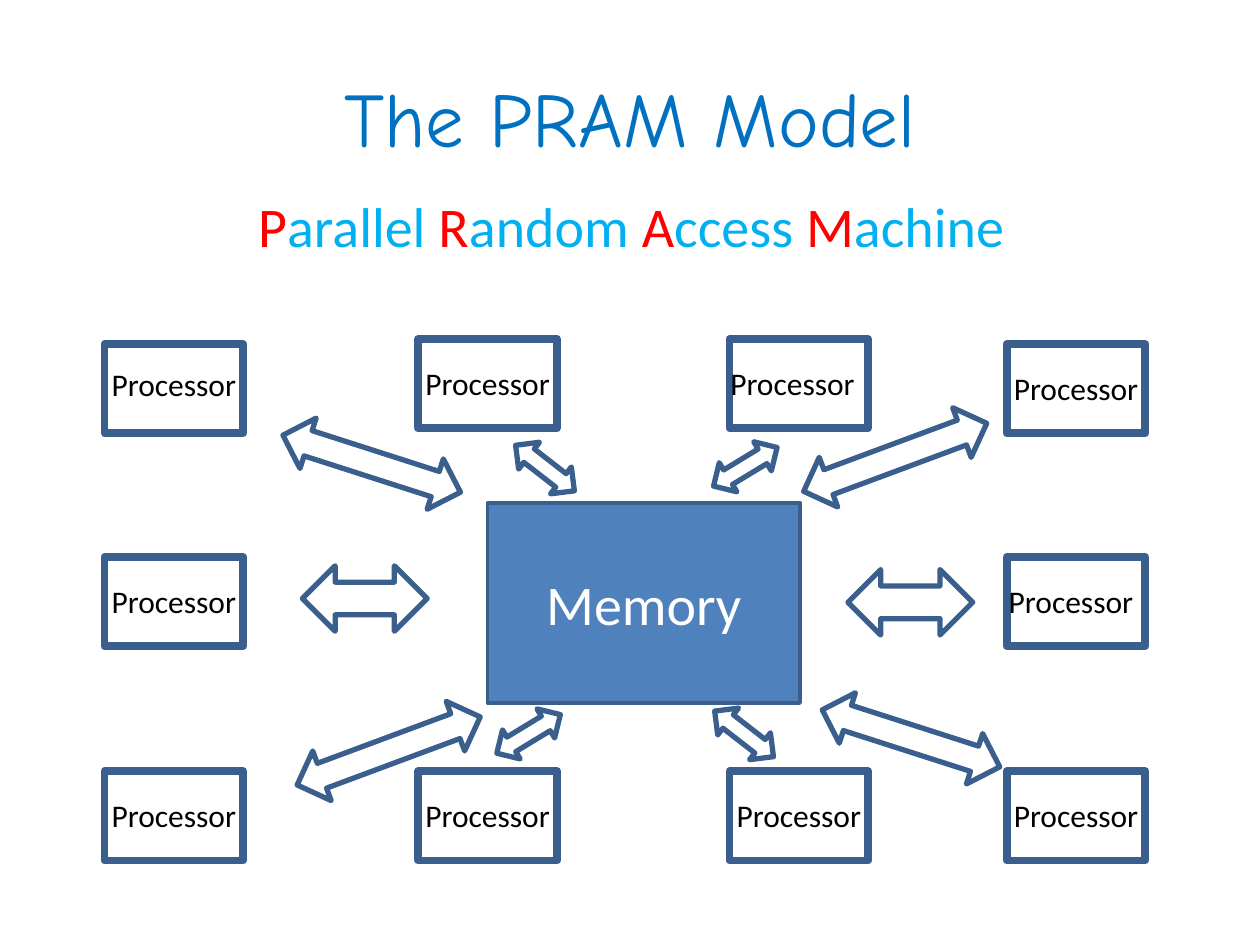
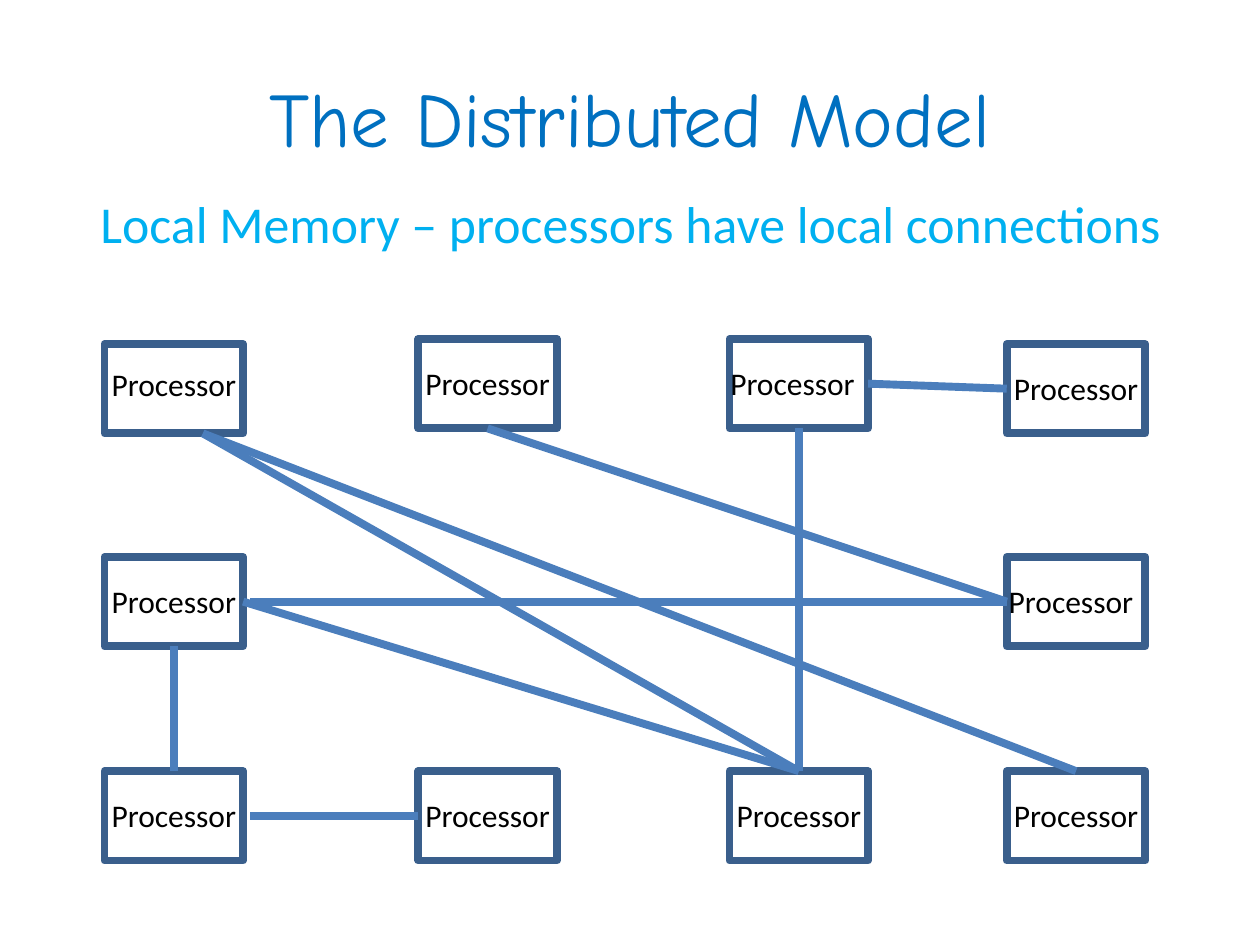
import dataclasses
import pptx
import pptx.dml.color
import pptx.enum.shapes
import pptx.enum.text
import pptx.util
import lxml.etree

Inches = pptx.util.Inches
Shapes = pptx.enum.shapes.MSO_SHAPE
Anchor = pptx.enum.text.MSO_ANCHOR


@dataclasses.dataclass(frozen=True)
class Theme:
    title_font: str = "Comic Neue"
    body_font: str = "Calibri"
    title_color: str = "0070C0"
    subtitle_color: str = "00B0F0"
    initial_color: str = "FF0000"
    label_color: str = "000000"
    memory_fill: str = "4F81BD"
    memory_text: str = "FFFFFF"
    outline: str = "3A5F8C"
    link: str = "4B7EBC"
    title_size: float = 44
    large_size: float = 32
    fitted_size: float = 29.6
    label_size: float = 18
    heavy_line: float = 4.5
    arrow_line: float = 3
    memory_line: float = 2


@dataclasses.dataclass(frozen=True)
class Box:
    left: float
    top: float
    width: float
    height: float

    def inner(self, left, top, width, height):
        return Box(self.left + left, self.top + top, width, height)

    def point(self, across, down):
        return (Inches(self.left + across * self.width),
                Inches(self.top + down * self.height))

    def lengths(self):
        return [Inches(value) for value in (self.left, self.top, self.width, self.height)]


THEME = Theme()
TITLE = Box(0.5, 0.3, 9, 1.25)
SUBTITLE = Box(0.51, 1.47, 9, 0.74)
DIAGRAM = Box(0.83, 2.69, 8.26, 4.14)
COLUMNS = (0, 2.49, 4.96, 7.16)
ROWS = (0.04, 1.73, 3.43)
PROCESSOR_SIZE = (1.1, 0.71)
LABEL_SIZE = (1.2, 0.4)

PROCESSORS = {
    "top left": (COLUMNS[0], ROWS[0]),
    "top inner left": (COLUMNS[1], 0),
    "top inner right": (COLUMNS[2], 0),
    "top right": (COLUMNS[3], ROWS[0]),
    "middle left": (COLUMNS[0], ROWS[1]),
    "middle right": (COLUMNS[3], ROWS[1]),
    "bottom left": (COLUMNS[0], ROWS[2]),
    "bottom inner left": (COLUMNS[1], ROWS[2]),
    "bottom inner right": (COLUMNS[2], ROWS[2]),
    "bottom right": (COLUMNS[3], ROWS[2]),
}
LABEL_OFFSET = (-0.05, 0.15)
SHIFTED_LABELS = {
    "top left": (-0.05, 0.12),
    "top inner right": (-0.1, 0.15),
    "middle right": (-0.09, 0.15),
}

ARROWS = (
    ((0.99, 0.52), 0, ((1.57, 1.8), (5.9, 1.83))),
    ((0.59, 0.27), 37.8, ((3.2, 0.89), (4.78, 3))),
    ((0.59, 0.27), 328.7, ((4.79, 0.88), (3.07, 3))),
    ((1.48, 0.42), 17.8, ((1.38, 0.78), (5.66, 2.96))),
    ((1.55, 0.42), 339.6, ((5.5, 0.73), (1.48, 3.06))),
)

TOP, BOTTOM, LEFT, RIGHT = (0.5, 0), (0.5, 1), (0, 0.5), (1, 0.5)
BOTTOM_OFF_CENTRE, RIGHT_WITH_GAP = (0.71, 1), (1.05, 0.5)
LINKS = (
    ("top left", BOTTOM_OFF_CENTRE, "bottom inner right", TOP),
    ("middle left", RIGHT, "bottom inner right", TOP),
    ("top inner right", BOTTOM, "bottom inner right", TOP),
    ("top inner left", BOTTOM, "middle right", LEFT),
    ("middle right", LEFT, "middle left", RIGHT_WITH_GAP),
    ("top right", LEFT, "top inner right", RIGHT),
    ("middle left", BOTTOM, "bottom left", TOP),
    ("bottom left", RIGHT_WITH_GAP, "bottom inner left", LEFT),
    ("top left", BOTTOM_OFF_CENTRE, "bottom right", TOP),
)


def rgb(color):
    return pptx.dml.color.RGBColor.from_string(color)


def write_text(shape, text, *, size, color, font=THEME.body_font,
               anchor=Anchor.TOP, wrap=True, initial_color=None):
    frame = shape.text_frame
    frame.word_wrap = wrap
    frame.vertical_anchor = anchor
    paragraph = frame.paragraphs[0]
    paragraph.alignment = pptx.enum.text.PP_ALIGN.CENTER
    pieces = [(text, color)]
    if initial_color:
        words = text.split(" ")
        pieces = []
        for index, word in enumerate(words):
            space = " " if index < len(words) - 1 else ""
            pieces += [(word[0], initial_color), (word[1:] + space, color)]
    for piece, piece_color in pieces:
        run = paragraph.add_run()
        run.text = piece
        run.font.name = font
        run.font.size = pptx.util.Pt(size)
        run.font.color.rgb = rgb(piece_color)


def add_text(slide, box, text, **text_format):
    write_text(slide.shapes.add_textbox(*box.lengths()), text, **text_format)


def add_outlined(slide, kind, box, line_width, fill=None, rotation=0):
    shape = slide.shapes.add_shape(kind, *box.lengths())
    shape.shadow.inherit = False
    shape.rotation = rotation
    shape.line.color.rgb = rgb(THEME.outline)
    shape.line.width = pptx.util.Pt(line_width)
    if fill:
        shape.fill.solid()
        shape.fill.fore_color.rgb = rgb(fill)
    else:
        shape.fill.background()
    return shape


def add_headings(slide, title, subtitle, **subtitle_format):
    add_text(slide, TITLE, title, size=THEME.title_size, color=THEME.title_color,
             font=THEME.title_font, anchor=Anchor.MIDDLE)
    add_text(slide, SUBTITLE, subtitle, color=THEME.subtitle_color, **subtitle_format)


def add_processors(slide, diagram):
    boxes = {name: diagram.inner(*corner, *PROCESSOR_SIZE)
             for name, corner in PROCESSORS.items()}
    for name, box in boxes.items():
        add_outlined(slide, Shapes.RECTANGLE, box, THEME.heavy_line)
        label = box.inner(*SHIFTED_LABELS.get(name, LABEL_OFFSET), *LABEL_SIZE)
        add_text(slide, label, "Processor", size=THEME.label_size,
                 color=THEME.label_color, wrap=False)
    return boxes


def add_memory(slide, diagram):
    memory = add_outlined(slide, Shapes.RECTANGLE, diagram.inner(3.04, 1.3, 2.48, 1.59),
                          THEME.memory_line, fill=THEME.memory_fill)
    write_text(memory, "Memory", size=THEME.large_size, color=THEME.memory_text,
               anchor=Anchor.MIDDLE)


def add_arrows(slide, diagram):
    for size, rotation, corners in ARROWS:
        for corner in corners:
            add_outlined(slide, Shapes.LEFT_RIGHT_ARROW, diagram.inner(*corner, *size),
                         THEME.arrow_line, rotation=rotation)


def add_links(slide, boxes):
    for start, start_site, end, end_site in LINKS:
        link = slide.shapes.add_connector(
            pptx.enum.shapes.MSO_CONNECTOR.STRAIGHT,
            *boxes[start].point(*start_site), *boxes[end].point(*end_site))
        link.line.color.rgb = rgb(THEME.link)
        link.line.width = pptx.util.Pt(THEME.heavy_line)
        lxml.etree.SubElement(link._element.spPr, pptx.oxml.ns.qn("a:effectLst"))


def build_shared_memory_slide(slide):
    add_headings(slide, "The PRAM Model", "Parallel Random Access Machine",
                 size=THEME.large_size, initial_color=THEME.initial_color)
    add_memory(slide, DIAGRAM)
    add_processors(slide, DIAGRAM)
    add_arrows(slide, DIAGRAM)


def build_distributed_slide(slide):
    add_headings(slide, "The Distributed Model",
                 "Local Memory – processors have local connections",
                 size=THEME.fitted_size)
    add_links(slide, add_processors(slide, DIAGRAM))


def main():
    presentation = pptx.Presentation()
    presentation.slide_width = Inches(10)
    presentation.slide_height = Inches(7.5)
    blank_layout = presentation.slide_layouts[6]
    for build in (build_shared_memory_slide, build_distributed_slide):
        build(presentation.slides.add_slide(blank_layout))
    presentation.save("out.pptx")


if __name__ == "__main__":
    main()
